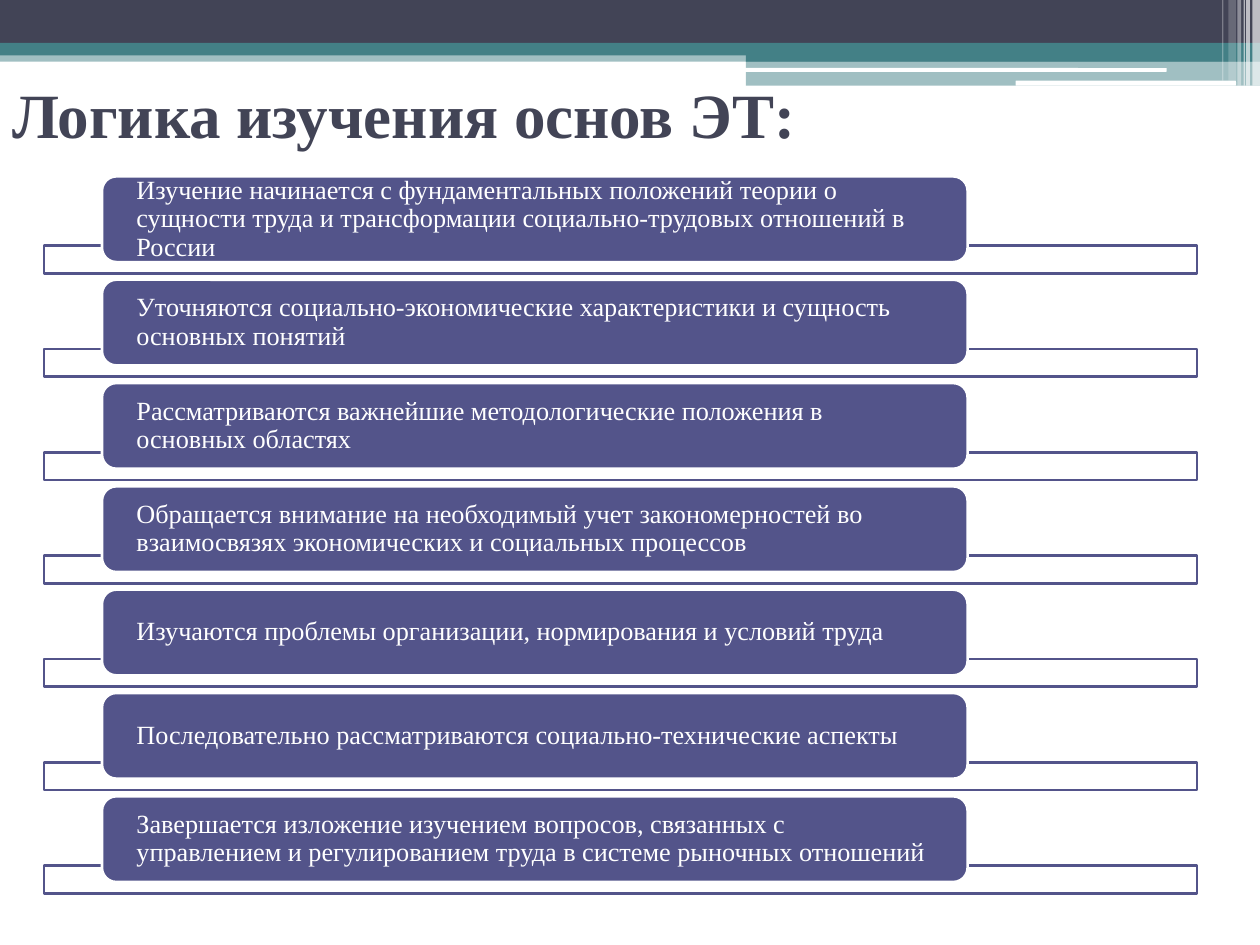
from lxml.etree import SubElement as Sub
from pptx import Presentation
from pptx.dml.color import RGBColor as Rgb
from pptx.enum.shapes import MSO_SHAPE as Kind
from pptx.enum.text import MSO_ANCHOR as Anchor, PP_ALIGN as Align
from pptx.oxml.ns import qn
from pptx.util import Inches, Pt

DARK, TEAL, WHITE, BLUE = "424456", "438086", "FFFFFF", "53548A"
FONT = "Times New Roman"
TOP, STEP = 1.4, 0.82

BANDS = [
    (0, 0.4, 10, 0.09, TEAL, 50),
    (0, 0, 10, 0.34, DARK, 100),
    (0, 0.34, 10, 0.1, TEAL, 100),
    (5.92, 0.39, 4.08, 0.1, TEAL, 100),
    (5.92, 0.48, 4.08, 0.2, TEAL, 50),
]
LINES = [(5.91, 0.54, 3.35, 0.03), (8.06, 0.64, 1.75, 0.04)]
STRIPES = [
    (9.94, 0.06, 0.68, 65),
    (9.89, 0.03, 0.68, 65),
    (9.87, 0.01, 0.68, 60),
    (9.82, 0.03, 0.68, 40),
    (9.75, 0.06, 0.64, 20),
    (9.7, 0.01, 0.64, 30),
]
STEPS = [
    "Изучение начинается с фундаментальных положений теории о сущности труда "
    "и трансформации социально-трудовых отношений в России",
    "Уточняются социально-экономические характеристики и сущность основных понятий",
    "Рассматриваются важнейшие методологические положения в основных областях",
    "Обращается внимание на необходимый учет закономерностей во взаимосвязях "
    "экономических и социальных процессов",
    "Изучаются проблемы организации, нормирования и условий труда",
    "Последовательно рассматриваются социально-технические аспекты",
    "Завершается изложение изучением вопросов, связанных с управлением "
    "и регулированием труда в системе рыночных отношений",
]


def color(code):
    """Turn a hex string into a colour."""
    return Rgb.from_string(code)


def block(slide, box, fill, alpha=100, line=None, kind=Kind.RECTANGLE):
    """Add a flat shape, see-through when alpha is below 100."""
    shape = slide.shapes.add_shape(kind, *map(Inches, box))
    shape.shadow.inherit = False
    shape.fill.solid()
    shape.fill.fore_color.rgb = color(fill)
    if alpha < 100:
        tint = shape.fill._xPr.find(qn("a:solidFill"))[0]
        Sub(tint, qn("a:alpha"), val=str(alpha * 1000))
    if line:
        shape.line.color.rgb = color(line)
        shape.line.width = Pt(1.5)
    else:
        shape.line.fill.background()
    return shape


def write(shape, text, size, ink, bold=False, side=0.1, edge=0.05, space=1.0):
    """Put one left-aligned, vertically centred paragraph in a shape."""
    frame = shape.text_frame
    frame.word_wrap = True
    frame.vertical_anchor = Anchor.MIDDLE
    frame.margin_left = frame.margin_right = Inches(side)
    frame.margin_top = frame.margin_bottom = Inches(edge)
    para = frame.paragraphs[0]
    para.alignment = Align.LEFT
    para.line_spacing = space
    run = para.add_run()
    run.text = text
    run.font.name = FONT
    run.font.size = Pt(size)
    run.font.bold = bold
    run.font.color.rgb = color(ink)


def header(slide):
    """Draw the bands, thin lines and stripes at the top."""
    for *box, fill, alpha in BANDS:
        block(slide, box, fill, alpha)
    for box in LINES:
        block(slide, box, WHITE, kind=Kind.ROUNDED_RECTANGLE)
    for left, width, height, alpha in STRIPES:
        block(slide, (left, 0, width, height), WHITE, alpha)


def title(slide, text):
    """Add the slide heading."""
    box = slide.shapes.add_textbox(*map(Inches, (0, 0.55, 9, 0.7)))
    write(box, text, 36, DARK, bold=True)


def step(slide, top, text):
    """Draw one step: an outlined bar with a rounded label over it."""
    block(slide, (0.35, top + 0.55, 9.15, 0.22), WHITE, 90, BLUE)
    label = block(slide, (0.81, top, 6.87, 0.68), BLUE, line=WHITE,
                  kind=Kind.ROUNDED_RECTANGLE)
    write(label, text, 15, WHITE, side=0.24, edge=0, space=0.9)


def main():
    """Build the slide and save it."""
    deck = Presentation()
    deck.slide_width, deck.slide_height = Inches(10), Inches(7.5)
    slide = deck.slides.add_slide(deck.slide_layouts[6])
    header(slide)
    title(slide, "Логика изучения основ ЭТ:")
    for row, text in enumerate(STEPS):
        step(slide, TOP + row * STEP, text)
    deck.save("out.pptx")


if __name__ == "__main__":
    main()
